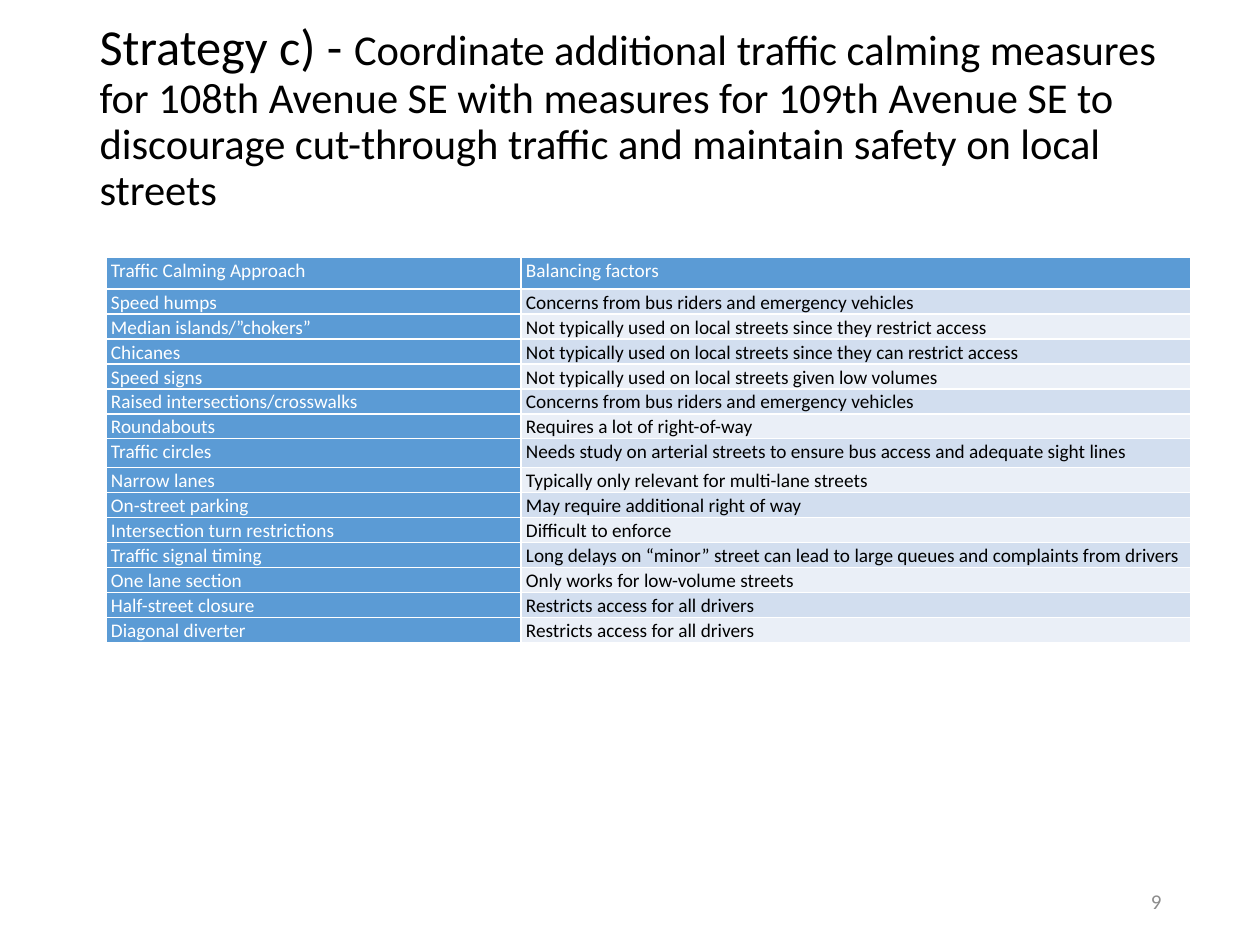
from pptx import Presentation
from pptx.dml.color import RGBColor
from pptx.enum.text import MSO_ANCHOR, MSO_AUTO_SIZE, PP_ALIGN
from pptx.util import Emu, Pt

LEFT, RIGHT = PP_ALIGN.LEFT, PP_ALIGN.RIGHT
TOP, MIDDLE = MSO_ANCHOR.TOP, MSO_ANCHOR.MIDDLE
NO_FIT = MSO_AUTO_SIZE.NONE

COLORS = {
    "text": "000000",
    "white": "FFFFFF",
    "number": "8C8C8C",
    "header": "5B9BD5",
    "odd": "D2DEEF",
    "even": "EAEFF7",
}

HEADING = [
    ("Strategy c) - ", 28.8),
    ("Coordinate additional traffic calming measures for 108th Avenue SE "
     "with measures for 109th Avenue SE to discourage cut-through traffic "
     "and maintain safety on local streets", 24.3),
]

APPROACHES = [
    ("Traffic Calming Approach", "Balancing factors"),
    ("Speed humps", "Concerns from bus riders and emergency vehicles"),
    ("Median islands/”chokers”", "Not typically used on local streets since they restrict access"),
    ("Chicanes", "Not typically used on local streets since they can restrict access"),
    ("Speed signs", "Not typically used on local streets given low volumes"),
    ("Raised intersections/crosswalks", "Concerns from bus riders and emergency vehicles"),
    ("Roundabouts", "Requires a lot of right-of-way"),
    ("Traffic circles",
     "Needs study on arterial streets to ensure bus access and adequate sight lines"),
    ("Narrow lanes", "Typically only relevant for multi-lane streets"),
    ("On-street parking", "May require additional right of way"),
    ("Intersection turn restrictions", "Difficult to enforce"),
    ("Traffic signal timing",
     "Long delays on “minor” street can lead to large queues and complaints from drivers"),
    ("One lane section", "Only works for low-volume streets"),
    ("Half-street closure", "Restricts access for all drivers"),
    ("Diagonal diverter", "Restricts access for all drivers"),
]
ROW_HEIGHT = 25
TALL_ROWS = {0: 32, 7: 29}


def px(length):
    return Emu(round(length * 914400 / 126))


def apply(target, values):
    for name, value in values.items():
        setattr(target, name, value)


class SlideBuilder:
    font_name = "Calibri"

    def __init__(self, presentation):
        self.slide = presentation.slides.add_slide(presentation.slide_layouts[5])

    def add_words(self, paragraph, text, size, color):
        run = paragraph.add_run()
        run.text = text
        apply(run.font, {"name": self.font_name, "size": Pt(size), "bold": False})
        run.font.color.rgb = RGBColor.from_string(COLORS[color])

    def title(self, left, top, width, height, parts):
        heading = self.slide.shapes.title
        apply(heading, {"left": px(left), "top": px(top),
                        "width": px(width), "height": px(height)})
        apply(heading.text_frame, {"word_wrap": True, "auto_size": NO_FIT,
                                   "vertical_anchor": MIDDLE, "margin_bottom": px(53)})
        paragraph = heading.text_frame.paragraphs[0]
        apply(paragraph, {"alignment": LEFT, "line_spacing": 0.9})
        for text, size in parts:
            self.add_words(paragraph, text, size, "text")

    def page_number(self, left, top, width, height, number):
        frame = self.slide.shapes.add_textbox(
            px(left), px(top), px(width), px(height)).text_frame
        apply(frame, {"word_wrap": True, "vertical_anchor": MIDDLE})
        frame.paragraphs[0].alignment = RIGHT
        self.add_words(frame.paragraphs[0], number, 12, "number")

    def table(self, left, top, widths, heights, rows):
        grid = self.slide.shapes.add_table(
            len(rows), len(widths), px(left), px(top),
            px(sum(widths)), px(sum(heights))).table
        grid.first_col = True
        for column, width in zip(grid.columns, widths):
            column.width = px(width)
        for r, (row, height) in enumerate(zip(rows, heights)):
            grid.rows[r].height = px(height)
            for c, text in enumerate(row):
                is_header = r == 0 or c == 0
                band = "header" if is_header else "odd" if r % 2 else "even"
                self.cell(grid.cell(r, c), text, band, "white" if is_header else "text")

    def cell(self, cell, text, fill, color):
        apply(cell, {"margin_left": px(5), "margin_right": px(5), "margin_top": 0,
                     "margin_bottom": 0, "vertical_anchor": TOP})
        cell.fill.solid()
        cell.fill.fore_color.rgb = RGBColor.from_string(COLORS[fill])
        paragraph = cell.text_frame.paragraphs[0]
        paragraph.line_spacing = 1.07
        self.add_words(paragraph, text, 11, color)


def main():
    presentation = Presentation()
    apply(presentation, {"slide_width": px(1260), "slide_height": px(945)})
    builder = SlideBuilder(presentation)
    builder.title(87, 50, 1086, 183, HEADING)
    builder.page_number(890, 876, 284, 50, "9")
    heights = [TALL_ROWS.get(r, ROW_HEIGHT) for r in range(len(APPROACHES))]
    builder.table(106, 257, [415, 670], heights, APPROACHES)
    presentation.save("out.pptx")


if __name__ == "__main__":
    main()
